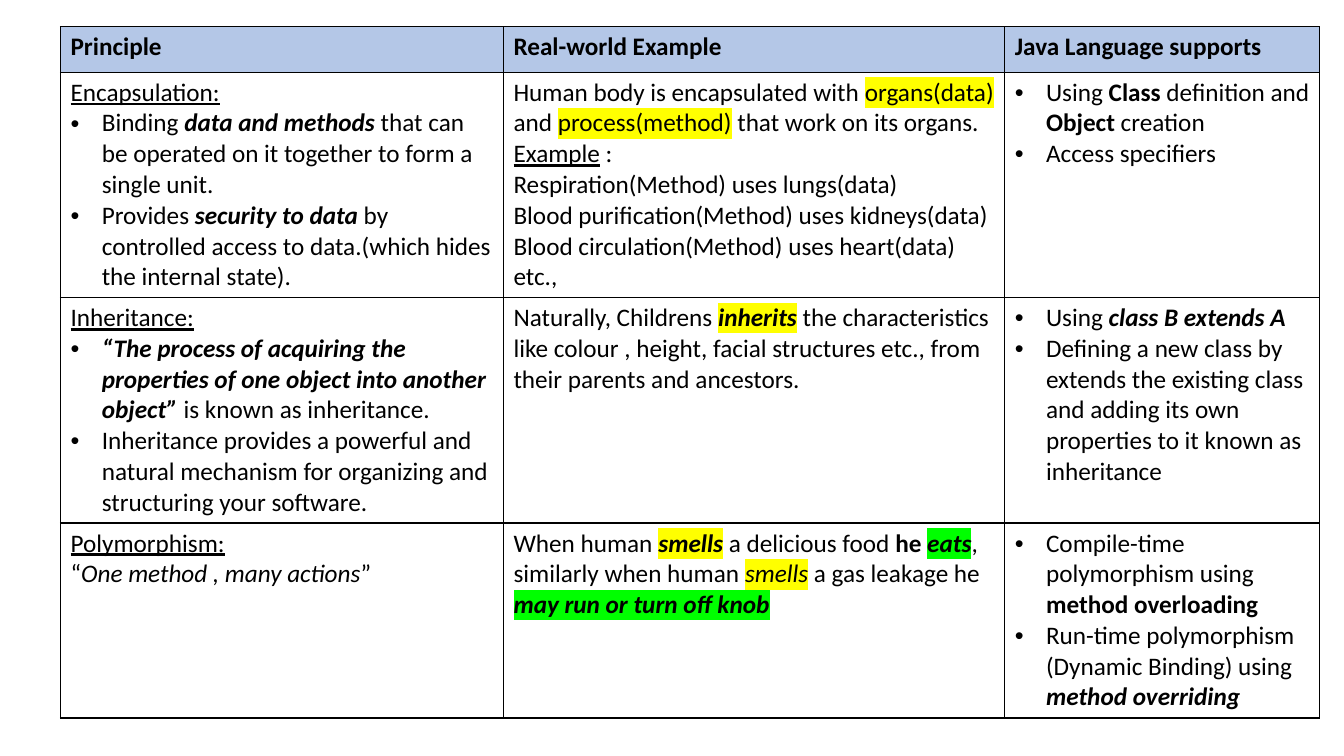
from lxml import etree
from pptx import Presentation
from pptx import util as u
from pptx.dml.color import RGBColor
from pptx.oxml import ns

COLORS = {"text": "000000", "border": "000000", "header": "B4C7E7",
          "yellow": "FFFF00", "green": "00FF00"}


def run(text, **fmt):
    """Text with its format: b, i, u (true or false) and hl (a colour name)."""
    return text, fmt


def line(*runs, bullet=False):
    return [run(r) if isinstance(r, str) else r for r in runs], bullet


def item(*runs):
    return line(*runs, bullet=True)


def strong(text, **fmt):
    return run(text, b=True, i=True, **fmt)


def add_solid(parent, color):
    fill = etree.SubElement(parent, ns.qn("a:solidFill"))
    etree.SubElement(fill, ns.qn("a:srgbClr"), val=COLORS[color])


class Deck:
    font, size, indent, border = "Calibri", u.Pt(18), u.Inches(0.31), u.Pt(1)

    def __init__(self, width, height):
        self.prs = Presentation()
        self.prs.slide_width, self.prs.slide_height = u.Inches(width), u.Inches(height)
        self.s = self.prs.slides.add_slide(self.prs.slide_layouts[6])

    def x(self, percent):
        return int(self.prs.slide_width * percent / 100)

    def y(self, percent):
        return int(self.prs.slide_height * percent / 100)

    def table(self, left, top, widths, heights, rows):
        """Place a table; all lengths are percentages of the slide."""
        tbl = self.s.shapes.add_table(len(rows), len(widths), self.x(left), self.y(top),
                                      self.x(sum(widths)), self.y(sum(heights))).table
        tbl.first_row = tbl.horz_banding = False
        for col, width in zip(tbl.columns, widths):
            col.width = self.x(width)
        for row, height, contents in zip(tbl.rows, heights, rows):
            row.height = self.y(height)
            for cell, lines in zip(row.cells, contents):
                self.cell(cell, lines)
        for cell in tbl.rows[0].cells:
            cell.fill.solid()
            cell.fill.fore_color.rgb = RGBColor.from_string(COLORS["header"])

    def cell(self, cell, lines):
        tcPr = cell._tc.get_or_add_tcPr()
        for side in ("lnL", "lnR", "lnT", "lnB"):
            ln = etree.SubElement(tcPr, ns.qn("a:" + side), w=str(self.border))
            add_solid(ln, "border")
        cell.fill.background()
        tf = cell.text_frame
        for n, (runs, bullet) in enumerate(lines):
            p = tf.add_paragraph() if n else tf.paragraphs[0]
            if bullet:
                self.bullet(p)
            for text, fmt in runs:
                self.text(p, text, **fmt)

    def bullet(self, p):
        pPr = p._p.get_or_add_pPr()
        pPr.set("marL", str(self.indent))
        pPr.set("indent", str(-self.indent))
        etree.SubElement(pPr, ns.qn("a:buFont"), typeface="Arial")
        etree.SubElement(pPr, ns.qn("a:buChar"), char="•")

    def text(self, p, text, b=False, i=False, u=False, hl=None):
        r = p.add_run()
        r.text = text
        f = r.font
        f.name, f.size = self.font, self.size
        f.bold, f.italic, f.underline = b, i, u
        f.color.rgb = RGBColor.from_string(COLORS["text"])
        if hl:
            mark = etree.Element(ns.qn("a:highlight"))
            etree.SubElement(mark, ns.qn("a:srgbClr"), val=COLORS[hl])
            r._r.rPr.find(ns.qn("a:solidFill")).addnext(mark)


# Table contents, one list per row
header = [[line(run(title, b=True))] for title in
          ("Principle", "Real-world Example", "Java Language supports")]

encapsulation = [
    [line(run("Encapsulation:", u=True)),
     item("Binding ", strong("data and methods"),
          " that can be operated on it together to form a single unit."),
     item("Provides ", strong("security to data"),
          " by controlled access to data.(which hides the internal state).")],
    [line("Human body is encapsulated with ", run("organs(data)", hl="yellow"), " and ",
          run("process(method)", hl="yellow"), " that work on its organs."),
     line(run("Example", u=True), " :"),
     line("Respiration(Method) uses lungs(data)"),
     line("Blood purification(Method) uses kidneys(data)"),
     line("Blood circulation(Method) uses heart(data) etc.,")],
    [item("Using ", run("Class", b=True), " definition and ",
          run("Object", b=True), " creation"),
     item("Access specifiers")],
]

inheritance = [
    [line(run("Inheritance:", u=True)),
     item(strong("“The process of acquiring the properties of one object "
                 "into another object”"), " is known as inheritance."),
     item("Inheritance provides a powerful and natural mechanism for "
          "organizing and structuring your software.")],
    [line("Naturally, Childrens ", strong("inherits", hl="yellow"),
          " the characteristics like colour , height, facial structures etc., "
          "from their parents and ancestors.")],
    [item("Using ", strong("class B extends A")),
     item("Defining a new class by extends the existing class and adding "
          "its own properties to it known as inheritance")],
]

polymorphism = [
    [line(run("Polymorphism:", u=True)),
     line("“", run("One method , many actions", i=True), "”")],
    [line("When human ", strong("smells", hl="yellow"), " a delicious food ",
          run("he ", b=True), strong("eats", hl="green"), ", similarly when human ",
          run("smells", i=True, hl="yellow"), " a gas leakage he ",
          strong("may run or turn off knob", hl="green"))],
    [item("Compile-time polymorphism using ", run("method overloading", b=True)),
     item("Run-time polymorphism (Dynamic Binding) using ", strong("method overriding"))],
]


def main():
    deck = Deck(13.33, 7.5)
    deck.table(4.5, 3.55, widths=(32.96, 37.3, 23.42), heights=(6, 29.75, 29.75, 25.8),
               rows=[header, encapsulation, inheritance, polymorphism])
    deck.prs.save("out.pptx")


if __name__ == "__main__":
    main()
